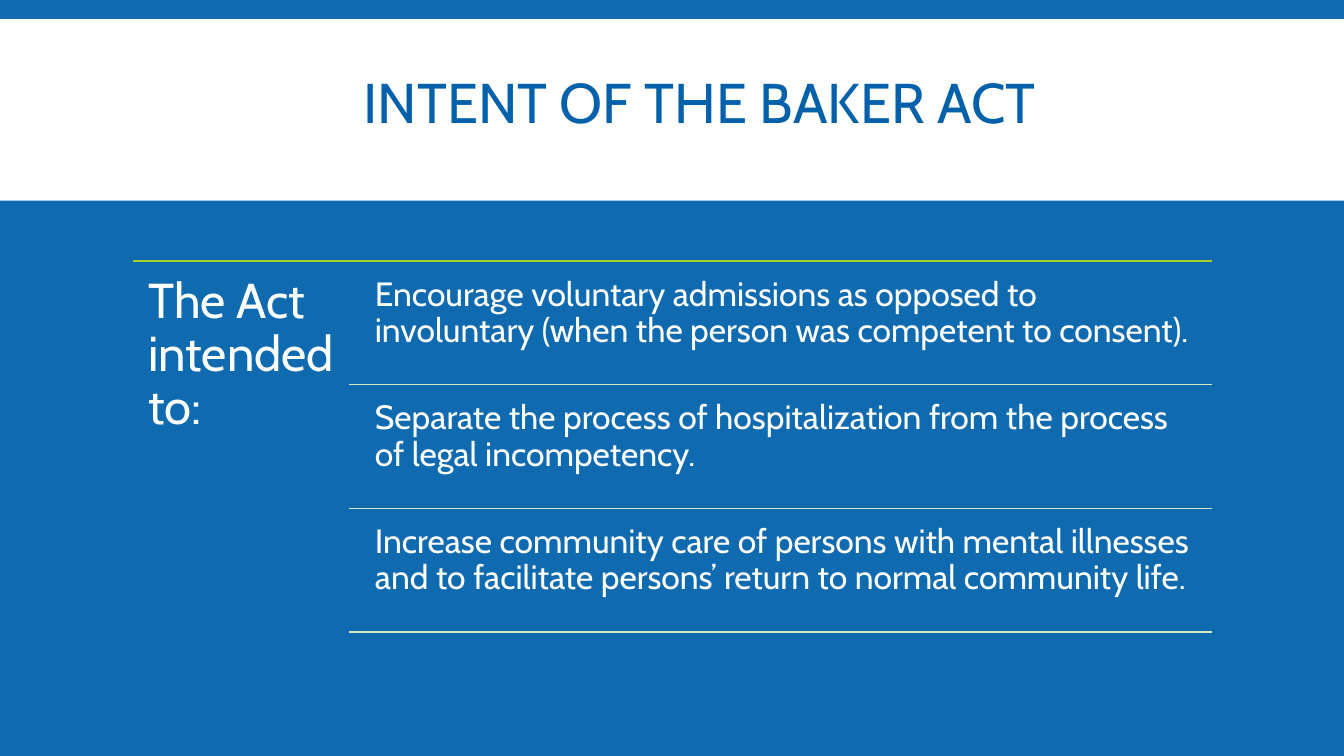
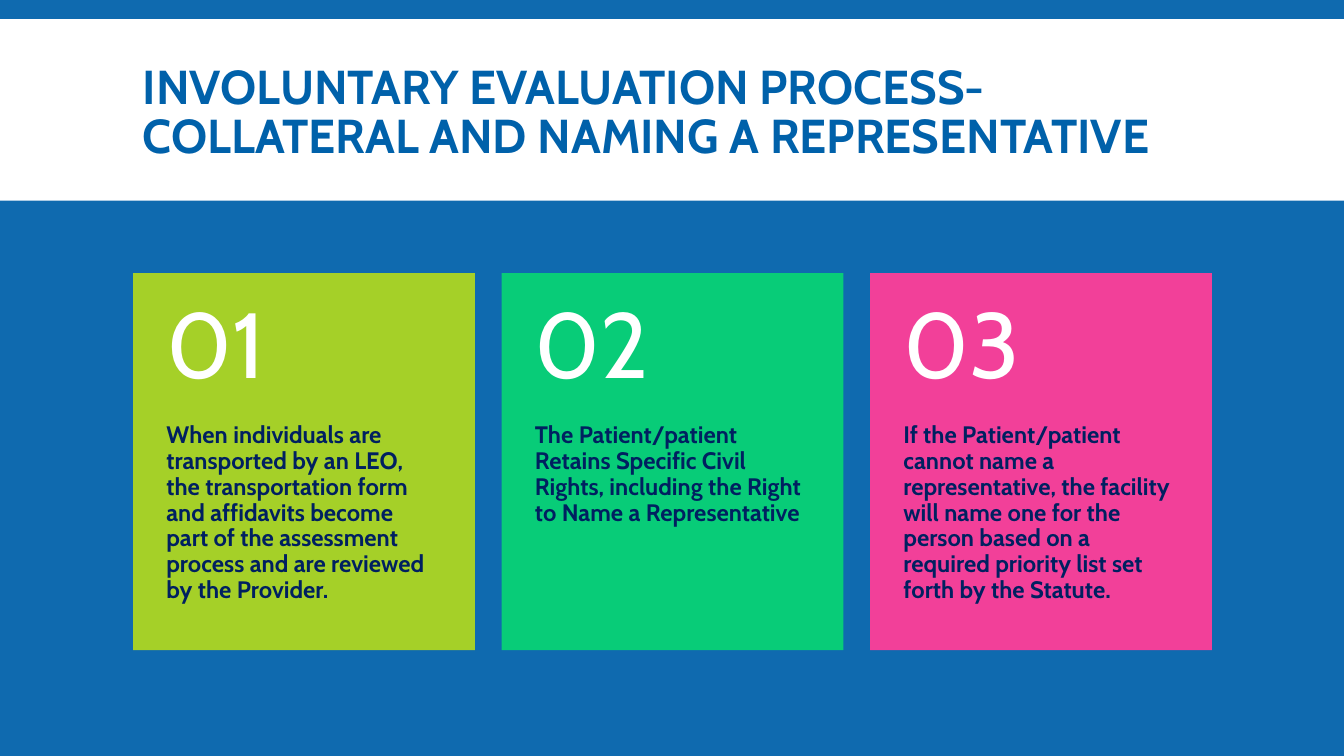
import pptx
import pptx.util
import pptx.dml.color
import pptx.enum.shapes
import pptx.enum.text
import pptx.oxml

Inches = pptx.util.Inches
Shape = pptx.enum.shapes.MSO_SHAPE
Align = pptx.enum.text.PP_ALIGN
Anchor = pptx.enum.text.MSO_ANCHOR

HUES = {"back": "0F6AAF", "blue": "0061AA", "white": "FFFFFF", "navy": "002060",
        "lime": "A5D028", "green": "08CC78", "pink": "F24099", "pale": "D8E9BE"}
RGB = {name: pptx.dml.color.RGBColor.from_string(code) for name, code in HUES.items()}


def block(slide, area, hue):
    """Add a plain filled rectangle."""
    rect = slide.shapes.add_shape(Shape.RECTANGLE, *map(Inches, area))
    rect.shadow.inherit = False
    rect.fill.solid()
    rect.fill.fore_color.rgb = RGB[hue]
    rect.line.fill.background()


def write(slide, area, text, size, hue, pads=(0.1, 0.05, 0.1, 0.05),
          bold=False, space=0.9, anchor=Anchor.TOP, align=Align.LEFT):
    """Add a wrapped text box; pads run left, top, right, bottom."""
    frame = slide.shapes.add_textbox(*map(Inches, area)).text_frame
    para = frame.paragraphs[0]
    run = para.add_run()
    run.text = text
    run.font.color.rgb = RGB[hue]
    left, top, right, low = map(Inches, pads)
    for part, style in (
        (frame, {"word_wrap": True, "vertical_anchor": anchor, "margin_left": left,
                 "margin_top": top, "margin_right": right, "margin_bottom": low}),
        (para, {"line_spacing": space, "alignment": align}),
        (run.font, {"name": "Cabin", "size": pptx.util.Pt(size), "bold": bold}),
    ):
        for key, value in style.items():
            setattr(part, key, value)


# Deck and shared background
deck = pptx.Presentation()
deck.slide_width, deck.slide_height = Inches(13.33), Inches(7.5)
fill = deck.slide_master.background.fill
fill.solid()
fill.fore_color.rgb = RGB["back"]

# Slides with title band
titles = [
    ("INTENT OF THE BAKER ACT", (1.59, 0.23, 10.7, 1.65),
     {"size": 40, "align": Align.CENTER}),
    ("INVOLUNTARY EVALUATION PROCESS- COLLATERAL AND NAMING A REPRESENTATIVE",
     (1.32, 0.31, 10.7, 1.65), {"size": 34, "bold": True}),
]
slides = []
for text, area, style in titles:
    slide = deck.slides.add_slide(deck.slide_layouts[6])
    block(slide, (0, 0.19, 13.33, 1.8), "white")
    write(slide, area, text, hue="blue", space=0.85, anchor=Anchor.MIDDLE, **style)
    slides.append(slide)
intent, process = slides

# Slide 1: lead text and goals
left, right, top = 1.32, 12.02, 2.59
inner, step = 3.46, 1.227
write(intent, (left, top, inner - left, 3.74), "The Act intended to:", 35, "white",
      (0.15, 0.15, 0.05, 0.15))
goals = [
    "Encourage voluntary admissions as opposed to involuntary "
    "(when the person was competent to consent).",
    "Separate the process of hospitalization from the process of legal incompetency.",
    "Increase community care of persons with mental illnesses "
    "and to facilitate persons’ return to normal community life.",
]
for i, goal in enumerate(goals):
    write(intent, (3.62, top + 0.06 + i * step, 8.4, 1.17), goal, 24, "white", [0.1] * 4)

# Slide 1: rules above and below the goals
for i in range(len(goals) + 1):
    start, hue = (inner, "pale") if i else (left, "lime")
    y = Inches(top + i * step)
    rule = intent.shapes.add_connector(
        pptx.enum.shapes.MSO_CONNECTOR.STRAIGHT, Inches(start), y, Inches(right), y)
    rule.line.color.rgb = RGB[hue]
    rule.line.width = pptx.util.Pt(1)
    props = rule._element.spPr
    props.append(props.makeelement(pptx.oxml.ns.qn("a:effectLst"), {}))

# Slide 2: numbered cards
cards = [
    ("lime", "When individuals are transported by an LEO, the transportation form and "
             "affidavits become part of the assessment process and are reviewed "
             "by the Provider."),
    ("green", "The Patient/patient Retains Specific Civil Rights, "
              "including the Right to Name a Representative"),
    ("pink", "If the Patient/patient cannot name a representative, the facility will name "
             "one for the person based on a required priority list set forth "
             "by the Statute."),
]
top, wide, high, head = 2.71, 3.39, 3.74, 1.49
gap = (right - left - len(cards) * wide) / (len(cards) - 1)
for i, (hue, text) in enumerate(cards):
    x = left + i * (wide + gap)
    block(process, (x, top, wide, high), hue)
    write(process, (x, top, wide, head), f"{i + 1:02}", 66, "white",
          (0.33, 0.18, 0.33, 0.18), anchor=Anchor.MIDDLE)
    write(process, (x, top + head, wide, high - head), text, 17, "navy",
          (0.33, 0, 0.35, 0.36), bold=True)

deck.save("out.pptx")
